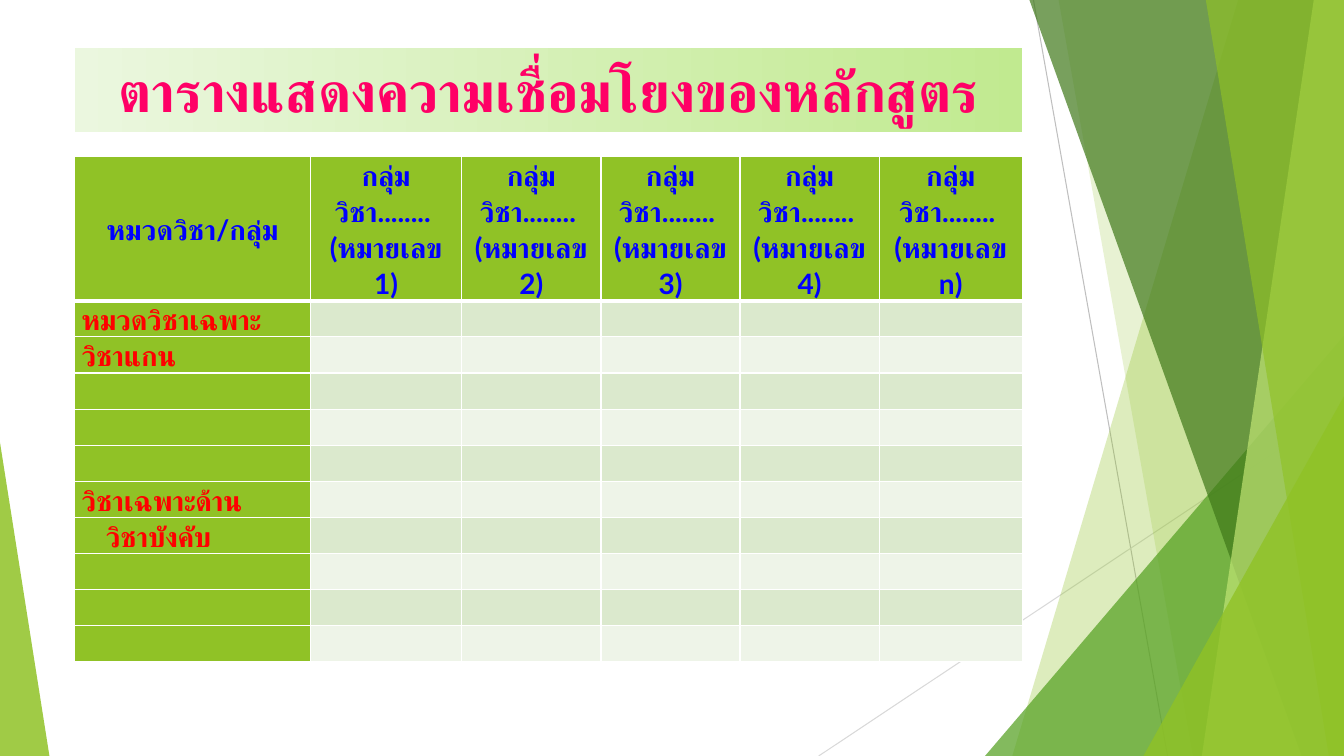
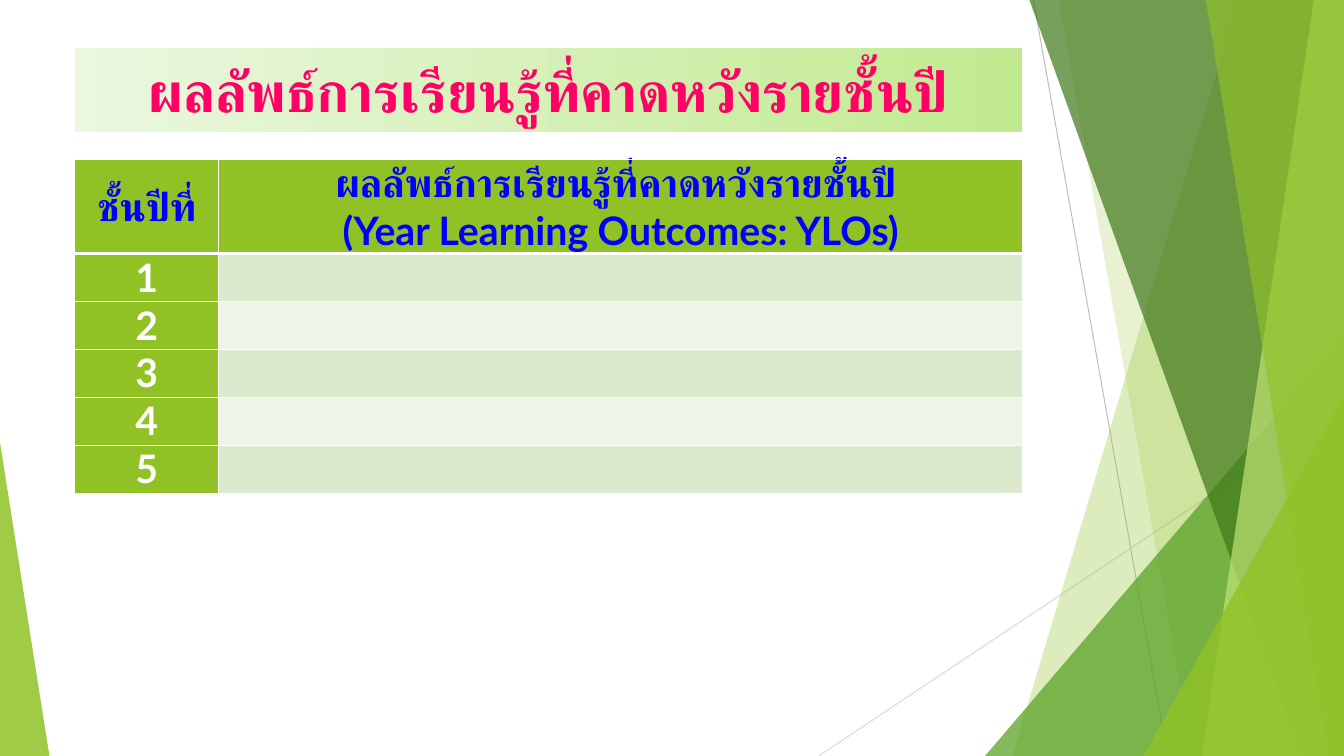
import dataclasses

import lxml.etree
import pptx
import pptx.dml.color
import pptx.enum.lang
import pptx.enum.shapes
import pptx.enum.text
import pptx.oxml.ns
import pptx.util

Inches = pptx.util.Inches
Pt = pptx.util.Pt
SHAPE = pptx.enum.shapes.MSO_SHAPE
ALIGN = pptx.enum.text.PP_ALIGN
ANCHOR = pptx.enum.text.MSO_ANCHOR
qn = pptx.oxml.ns.qn


@dataclasses.dataclass(frozen=True)
class Theme:
    wide: float = 13.33
    high: float = 7.5
    left: float = 0.74
    span: float = 9.4
    font: str = "Lato"
    title_size: int = 40
    title: str = "FF0066"
    fade: tuple = ("EBF7DF", "C1EA90")
    lime: str = "90C226"
    green: str = "54A021"
    dark: str = "3F7819"
    pale: str = "C0E474"
    bands: tuple = ("DBE9CD", "EEF4E8")
    head: str = "0000FF"
    label: str = "FF0000"
    white: str = "FFFFFF"
    rules: tuple = ("BFBFBF", "D9D9D9")


THEME = Theme()


@dataclasses.dataclass(frozen=True)
class Style:
    size: float
    color: str
    align: object = ALIGN.CENTER
    space: float = 1.0
    track: float = 0


def rgb(code):
    return pptx.dml.color.RGBColor.from_string(code)


def add_node(parent, tag, **values):
    return lxml.etree.SubElement(parent, qn(tag), **values)


def paint(shape, color, alpha):
    """Fill a shape with a flat colour at alpha percent, with no outline."""
    shape.fill.solid()
    shape.fill.fore_color.rgb = rgb(color)
    shape.line.fill.background()
    shape.shadow.inherit = False
    node = shape.element.spPr.find(".//" + qn("a:srgbClr"))
    add_node(node, "a:alpha", val=str(alpha * 1000))


def add_blade(slide, top, foot, color, alpha):
    """Fill from a slanted edge, top x to foot x, out to the right side."""
    points = [(THEME.wide, 0), (THEME.wide, THEME.high), (foot, THEME.high)]
    form = slide.shapes.build_freeform(Inches(top), 0)
    form.add_line_segments([(Inches(x), Inches(y)) for x, y in points], close=True)
    paint(form.convert_to_shape(), color, alpha)


def add_wedge(slide, left, width, height, peak, color, alpha):
    """Stand a triangle on the bottom edge; peak 0 is left, 1 is right."""
    shape = slide.shapes.add_shape(
        SHAPE.ISOSCELES_TRIANGLE, Inches(left), Inches(THEME.high - height),
        Inches(width), Inches(height))
    shape.adjustments[0] = peak
    paint(shape, color, alpha)


def add_rule(slide, start, end, color):
    line = slide.shapes.add_connector(
        pptx.enum.shapes.MSO_CONNECTOR.STRAIGHT,
        *(Inches(value) for value in start + end))
    line.line.color.rgb = rgb(color)
    line.line.width = Pt(0.75)
    add_node(line.element.spPr, "a:effectLst")


def add_backdrop(slide):
    add_rule(slide, (10.25, 0), (11.58, THEME.high), THEME.rules[0])
    add_rule(slide, (THEME.wide, 4.03), (8.12, THEME.high), THEME.rules[1])
    add_blade(slide, 12.28, 10.04, THEME.lime, 30)
    add_blade(slide, 10.5, 11.83, THEME.lime, 20)
    add_wedge(slide, 9.77, 3.56, 4.17, 1, THEME.green, 72)
    add_blade(slide, 10.21, 12.91, THEME.dark, 70)
    add_blade(slide, 13.03, 11.92, THEME.pale, 70)
    add_blade(slide, 11.96, 13.18, THEME.lime, 65)
    add_wedge(slide, 11.34, 1.99, 3.57, 1, THEME.lime, 80)
    add_wedge(slide, 0, 0.49, 3.11, 0, THEME.lime, 85)


def share_backdrop(slide, layout):
    """Draw the backdrop, then move it to the layout so all slides show it."""
    add_backdrop(slide)
    for shape in list(slide.shapes):
        layout.shapes.element.append(shape.element)


def add_text(frame, lines, style):
    for index, line in enumerate(lines):
        para = frame.add_paragraph() if index else frame.paragraphs[0]
        para.alignment = style.align
        para.line_spacing = style.space
        run = para.add_run()
        run.text = line
        font = run.font
        font.name = THEME.font
        font.size = Pt(style.size)
        font.bold = True
        font.color.rgb = rgb(style.color)
        font.language_id = pptx.enum.lang.MSO_LANGUAGE_ID.THAI
        props = run._r.get_or_add_rPr()
        add_node(props, "a:cs", typeface=THEME.font)
        if style.track:
            props.set("spc", str(round(style.track * 100)))


def add_title(slide, text):
    band = slide.shapes.add_shape(
        SHAPE.RECTANGLE, Inches(THEME.left), Inches(0.48),
        Inches(THEME.span), Inches(0.83))
    band.shadow.inherit = False
    band.line.fill.background()
    band.fill.gradient()
    band.fill.gradient_angle = 0
    for stop, color in zip(band.fill.gradient_stops, THEME.fade):
        stop.color.rgb = rgb(color)
    frame = band.text_frame
    frame.word_wrap = True
    frame.vertical_anchor = ANCHOR.MIDDLE
    add_text(frame, [text], Style(THEME.title_size, THEME.title))


def add_border(cell, foot):
    """Draw white cell borders; foot is the bottom width in points."""
    props = cell._tc.get_or_add_tcPr()
    for side, width in (("L", 1), ("R", 1), ("T", 1), ("B", foot)):
        line = add_node(props, "a:ln" + side, w=str(Pt(width)))
        fill = add_node(line, "a:solidFill")
        add_node(fill, "a:srgbClr", val=THEME.white)


def set_cell(cell, lines, style, color, header):
    cell.margin_left = cell.margin_right = Inches(0.07)
    cell.margin_top = cell.margin_bottom = 0
    cell.vertical_anchor = ANCHOR.MIDDLE if header else ANCHOR.TOP
    add_border(cell, 3 if header else 1)
    cell.fill.solid()
    cell.fill.fore_color.rgb = rgb(color)
    if lines:
        add_text(cell.text_frame, lines, style)
    else:
        para = cell.text_frame.paragraphs[0]
        add_node(para._p, "a:endParaRPr", sz=str(style.size * 100))


def add_grid(slide, top, widths, heights, heads, labels, styles):
    """Add a table: heads fill the first row, labels the first column."""
    frame = slide.shapes.add_table(
        len(labels) + 1, len(heads), Inches(THEME.left), Inches(top),
        Inches(THEME.span), Inches(sum(heights)))
    table = frame.table
    for column, width in zip(table.columns, widths):
        column.width = Inches(width)
    for row, height in zip(table.rows, heights):
        row.height = Inches(height)
    head_style, label_style = styles
    for col, lines in enumerate(heads):
        set_cell(table.cell(0, col), lines, head_style, THEME.lime, True)
    for row, label in enumerate(labels, 1):
        for col in range(len(heads)):
            color = THEME.bands[(row - 1) % 2] if col else THEME.lime
            lines = [label] if label and not col else []
            set_cell(table.cell(row, col), lines, label_style, color, False)
    return table


def add_links(slide):
    add_title(slide, "ตารางแสดงความเชื่อมโยงของหลักสูตร")
    heads = [["หมวดวิชา/กลุ่ม"]]
    heads += [["กลุ่มวิชา........ ", f"(หมายเลข {mark})"] for mark in "1234n"]
    labels = ["หมวดวิชาเฉพาะ", "วิชาแกน", "", "", "", "วิชาเฉพาะด้าน",
              "วิชาบังคับ", "", "", ""]
    styles = (Style(20, THEME.head, space=1.07),
              Style(20, THEME.label, ALIGN.LEFT, 1.07, -0.2))
    heights = [1.37] + [3.58 / len(labels)] * len(labels)
    widths = [2.34, 1.5, 1.38, 1.38, 1.38, 1.42]
    table = add_grid(slide, 1.55, widths, heights, heads, labels, styles)
    table.cell(labels.index("วิชาบังคับ") + 1, 0).margin_left = Inches(0.31)


def add_years(slide):
    title = "ผลลัพธ์การเรียนรู้ที่คาดหวังรายชั้นปี"
    add_title(slide, title)
    heads = [["ชั้นปีที่"], [title + " ", "(Year Learning Outcomes: YLOs)"]]
    labels = list("12345")
    styles = (Style(28, THEME.head), Style(28, THEME.white))
    heights = [0.84] + [2.33 / len(labels)] * len(labels)
    add_grid(slide, 1.58, [1.43, 7.97], heights, heads, labels, styles)


def main():
    deck = pptx.Presentation()
    deck.slide_width = Inches(THEME.wide)
    deck.slide_height = Inches(THEME.high)
    blank = deck.slide_layouts[6]
    first = deck.slides.add_slide(blank)
    share_backdrop(first, blank)
    add_links(first)
    add_years(deck.slides.add_slide(blank))
    deck.save("out.pptx")


if __name__ == "__main__":
    main()
